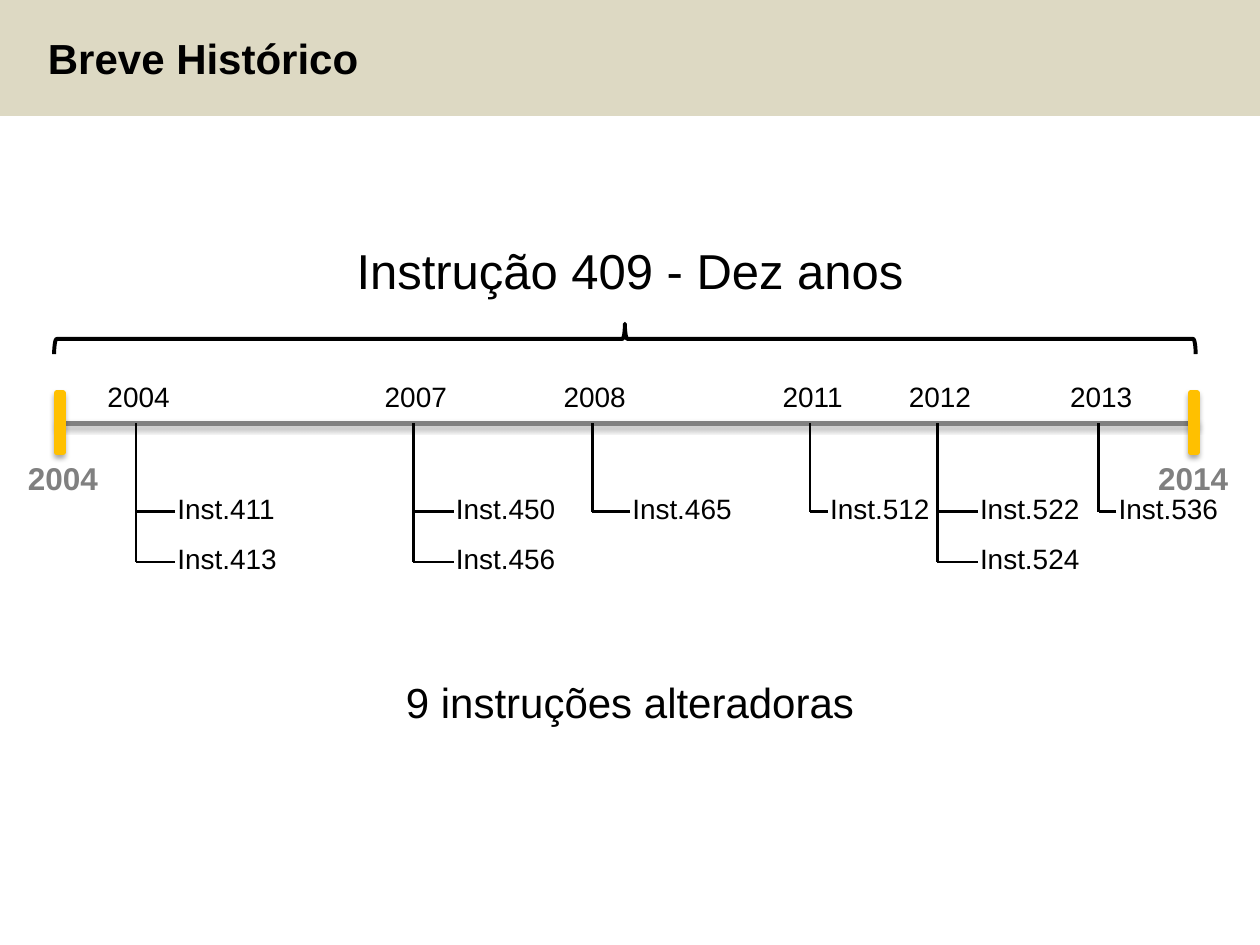
from lxml import etree
from pptx import Presentation
from pptx.dml.color import RGBColor
from pptx.enum.shapes import MSO_CONNECTOR, MSO_SHAPE
from pptx.enum.text import MSO_ANCHOR, MSO_AUTO_SIZE, PP_ALIGN
from pptx.oxml.ns import qn
from pptx.util import Inches, Pt

STRAIGHT = MSO_CONNECTOR.STRAIGHT
RECTANGLE, BRACE = MSO_SHAPE.RECTANGLE, MSO_SHAPE.RIGHT_BRACE
MIDDLE, NO_FIT = MSO_ANCHOR.MIDDLE, MSO_AUTO_SIZE.NONE
LEFT, CENTER = PP_ALIGN.LEFT, PP_ALIGN.CENTER
BLACK, GRAY, GOLD, BEIGE = "000000", "808080", "FFC000", "DDD9C3"
AXIS_TOP, ROW_TOP, ROW_STEP = 3.36, 4.06, 0.4
EVENTS = [
    ("2004", 1.08, 0.31, ["Inst.411", "Inst.413"]),
    ("2007", 3.28, 0.32, ["Inst.450", "Inst.456"]),
    ("2008", 4.7, 0.3, ["Inst.465"]),
    ("2011", 6.43, 0.14, ["Inst.512"]),
    ("2012", 7.44, 0.32, ["Inst.522", "Inst.524"]),
    ("2013", 8.72, 0.14, ["Inst.536"]),
]


def color(value):
    """Turn a hex string into a colour."""
    return RGBColor.from_string(value)


def write(shape, text, size, hex_color=BLACK, bold=False, alignment=CENTER):
    """Put one formatted paragraph into a shape."""
    paragraph = shape.text_frame.paragraphs[0]
    paragraph.alignment = alignment
    run = paragraph.add_run()
    run.text = text
    for name, value in {"name": "Arial", "size": Pt(size), "bold": bold}.items():
        setattr(run.font, name, value)
    run.font.color.rgb = color(hex_color)


def add_text(slide, box, text, size, wrap=False, **formats):
    """Add a text box at the given left, top, width and height."""
    shape = slide.shapes.add_textbox(*map(Inches, box))
    shape.text_frame.word_wrap = wrap
    write(shape, text, size, **formats)


def set_effects(shape, shadow):
    """Give a shape a soft lower shadow or an empty effect list."""
    properties = shape._element.spPr
    for effects in properties.findall(qn("a:effectLst")):
        properties.remove(effects)
    effects = etree.SubElement(properties, qn("a:effectLst"))
    if shadow:
        outer = etree.SubElement(
            effects, qn("a:outerShdw"), blurRad=str(Pt(3.1)), dist=str(Pt(1.8)),
            dir="5400000", rotWithShape="0")
        black = etree.SubElement(outer, qn("a:srgbClr"), val=BLACK)
        etree.SubElement(black, qn("a:alpha"), val="35000")


def set_line(shape, hex_color, width):
    """Set the colour and width of an outline."""
    shape.line.color.rgb = color(hex_color)
    shape.line.width = Pt(width)


def add_line(slide, ends, hex_color=BLACK, width=1.5, shadow=False):
    """Add a straight line between two points."""
    connector = slide.shapes.add_connector(STRAIGHT, *map(Inches, ends))
    set_line(connector, hex_color, width)
    set_effects(connector, shadow)


def add_title(slide, text):
    """Format the title placeholder as a full-width band."""
    title = slide.shapes.title
    box = {"left": 0, "top": 0, "width": 10, "height": 0.92}
    for name, value in box.items():
        setattr(title, name, Inches(value))
    title.fill.solid()
    title.fill.fore_color.rgb = color(BEIGE)
    formats = {"margin_left": Inches(0.38), "vertical_anchor": MIDDLE,
               "auto_size": NO_FIT, "word_wrap": True}
    for name, value in formats.items():
        setattr(title.text_frame, name, value)
    write(title, text, 24, bold=True, alignment=LEFT)


def add_end(slide, left, year, label_center):
    """Add a gold bar and its year at one end of the axis."""
    bar = slide.shapes.add_shape(RECTANGLE, *map(Inches, (left, 3.12, 0.05, 0.47)))
    bar.fill.solid()
    bar.fill.fore_color.rgb = color(GOLD)
    set_line(bar, GOLD, 3)
    set_effects(bar, True)
    add_text(slide, (label_center - 0.38, 3.59, 0.76, 0.4), year, 18,
             hex_color=GRAY, bold=True)


def add_event(slide, year, spine, tick, labels):
    """Add a year with the instructions that branch from its spine."""
    add_text(slide, (spine - 0.33, 2.96, 0.7, 0.37), year, 16)
    bottom = ROW_TOP + ROW_STEP * (len(labels) - 1)
    add_line(slide, (spine, AXIS_TOP, spine, bottom))
    for row, label in enumerate(labels):
        top = ROW_TOP + ROW_STEP * row
        add_line(slide, (spine + tick, top, spine, top))
        add_text(slide, (spine + tick - 0.08, top - 0.21, 1.1, 0.37), label, 16,
                 wrap=True, alignment=LEFT)


def add_brace(slide):
    """Add the brace that spans the whole period."""
    brace = slide.shapes.add_shape(BRACE, *map(Inches, (4.84, -1.84, 0.24, 9.06)))
    brace.rotation = 270
    brace.fill.background()
    set_line(brace, BLACK, 2.25)
    set_effects(brace, False)


def main():
    """Build the timeline slide."""
    presentation = Presentation()
    presentation.slide_width, presentation.slide_height = Inches(10), Inches(7.5)
    slide = presentation.slides.add_slide(presentation.slide_layouts[5])
    add_title(slide, "Breve Histórico")
    add_line(slide, (0.45, AXIS_TOP, 9.5, AXIS_TOP), GRAY, 3, shadow=True)
    add_end(slide, 0.45, "2004", 0.5)
    add_end(slide, 9.45, "2014", 9.47)
    for event in EVENTS:
        add_event(slide, *event)
    add_brace(slide)
    add_text(slide, (2.7, 1.86, 4.6, 0.57), "Instrução 409 - Dez anos", 28)
    add_text(slide, (3.1, 5.32, 3.8, 0.5), "9 instruções alteradoras", 24)
    presentation.save("out.pptx")


if __name__ == "__main__":
    main()
